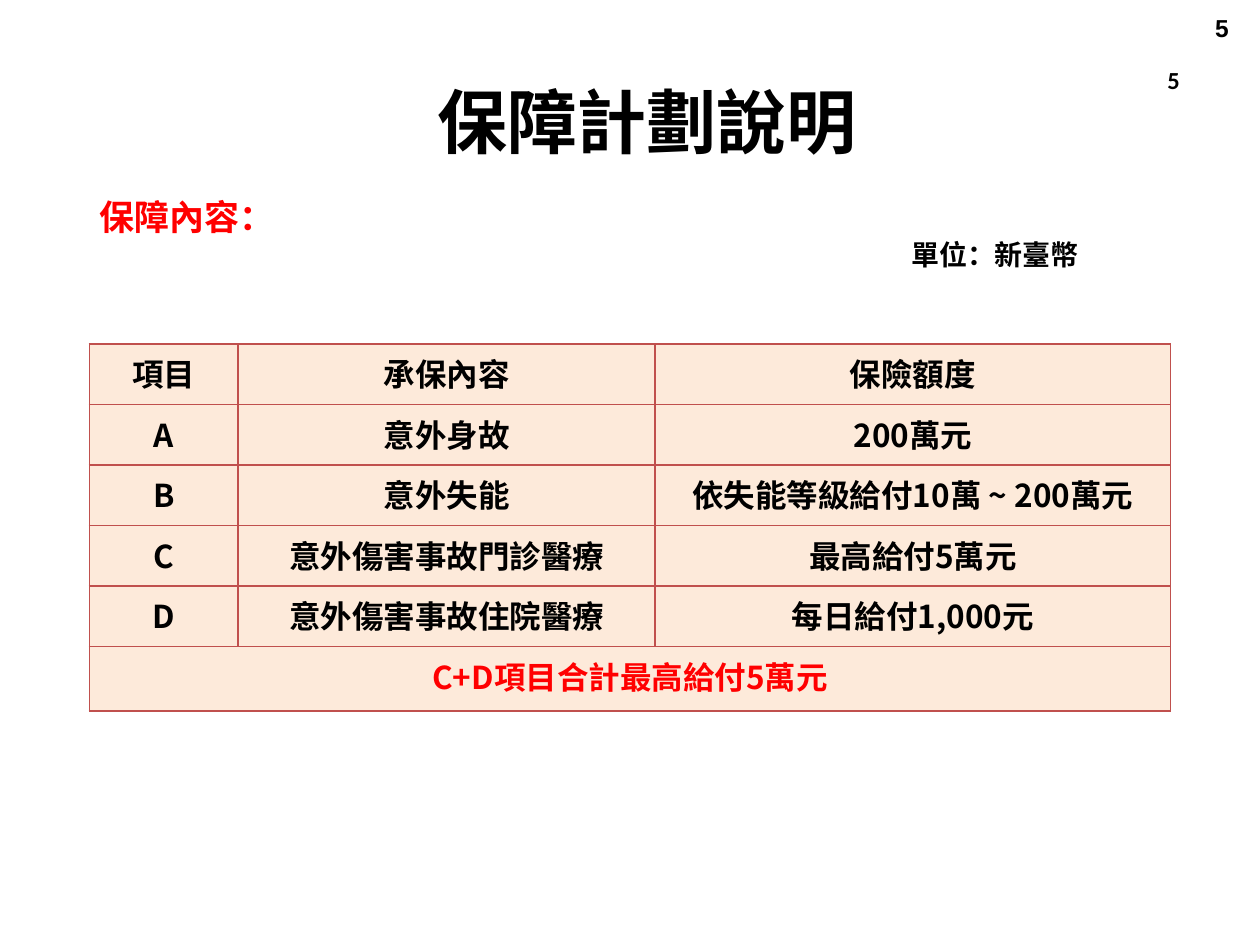
from lxml import etree
from pptx import Presentation
from pptx.dml.color import RGBColor
from pptx.enum.text import MSO_ANCHOR, PP_ALIGN
from pptx.oxml.ns import qn
from pptx.util import Pt

BLACK = RGBColor(0x00, 0x00, 0x00)
RED = RGBColor(0xFF, 0x00, 0x00)
PEACH = RGBColor(0xFD, 0xEA, 0xDA)
BORDER = RGBColor(0xC0, 0x50, 0x4D)
CJK_FONT = "Noto Sans CJK SC"
LEFT, CENTER, RIGHT = PP_ALIGN.LEFT, PP_ALIGN.CENTER, PP_ALIGN.RIGHT
MIDDLE = MSO_ANCHOR.MIDDLE


def write(para, text, size, color=BLACK, align=LEFT, font=CJK_FONT):
    para.alignment = align
    span = para.add_run()
    span.text = text
    span.font.size = Pt(size)
    span.font.bold = True
    span.font.color.rgb = color
    span.font.name = font
    etree.SubElement(span.font._element, qn("a:ea"), typeface=font)


def add_frame(left, top, width, height):
    box = page.shapes.add_textbox(Pt(left), Pt(top), Pt(width), Pt(height))
    box.text_frame.word_wrap = True
    return box.text_frame


deck = Presentation()
deck.slide_width, deck.slide_height = Pt(720), Pt(540)
page = deck.slides.add_slide(deck.slide_layouts[6])

# Page numbers
for left, top, font in ((513.4, 33.8, "Calibri"), (541.4, 3.6, "Arial")):
    frame = add_frame(left, top, 167.8, 37.4)
    write(frame.paragraphs[0], "5", 14, align=RIGHT, font=font)

# Title
title = add_frame(241.2, 43.2, 257, 55.4)
title.word_wrap = False
title.margin_top = 0
title.vertical_anchor = MIDDLE
write(title.paragraphs[0], "保障計劃說明", 40, align=CENTER)

# Coverage table
ROWS = (
    ("項目", "承保內容", "保險額度"),
    ("A", "意外身故", "200萬元"),
    ("B", "意外失能", "依失能等級給付10萬 ~ 200萬元"),
    ("C", "意外傷害事故門診醫療", "最高給付5萬元"),
    ("D", "意外傷害事故住院醫療", "每日給付1,000元"),
    ("C+D項目合計最高給付5萬元", "", ""),
)
COLUMN_WIDTHS = (85, 238.3, 294.5)
ROW_HEIGHTS = (34.56,) * 5 + (36.8,)
table = page.shapes.add_table(
    len(ROWS), len(COLUMN_WIDTHS), Pt(51.1), Pt(196.6),
    Pt(sum(COLUMN_WIDTHS)), Pt(sum(ROW_HEIGHTS))).table
for column, width in zip(table.columns, COLUMN_WIDTHS):
    column.width = Pt(width)
for row, height in zip(table.rows, ROW_HEIGHTS):
    row.height = Pt(height)

last = len(ROWS) - 1
table.cell(last, 0).merge(table.cell(last, 2))
for r, texts in enumerate(ROWS):
    for c, text in enumerate(texts):
        cell = table.cell(r, c)
        if text:
            write(cell.text_frame.paragraphs[0], text, 18,
                  RED if r == last else BLACK, CENTER)
        # Borders come before the fill in the cell properties
        props = cell._tc.get_or_add_tcPr()
        for side in ("lnL", "lnR", "lnT", "lnB"):
            line = etree.SubElement(props, qn("a:" + side), w=str(Pt(1)))
            solid = etree.SubElement(line, qn("a:solidFill"))
            etree.SubElement(solid, qn("a:srgbClr"), val=str(BORDER))
        cell.fill.solid()
        cell.fill.fore_color.rgb = PEACH

# Section heading and currency unit
heading = add_frame(49.7, 111.6, 629.3, 99.4)
heading.margin_top = 0
write(heading.paragraphs[0], "保障內容：", 20, RED)
unit = heading.add_paragraph()
unit._p.get_or_add_pPr().set("marL", str(Pt(464)))
write(unit, "單位：新臺幣", 16)

deck.save("out.pptx")
